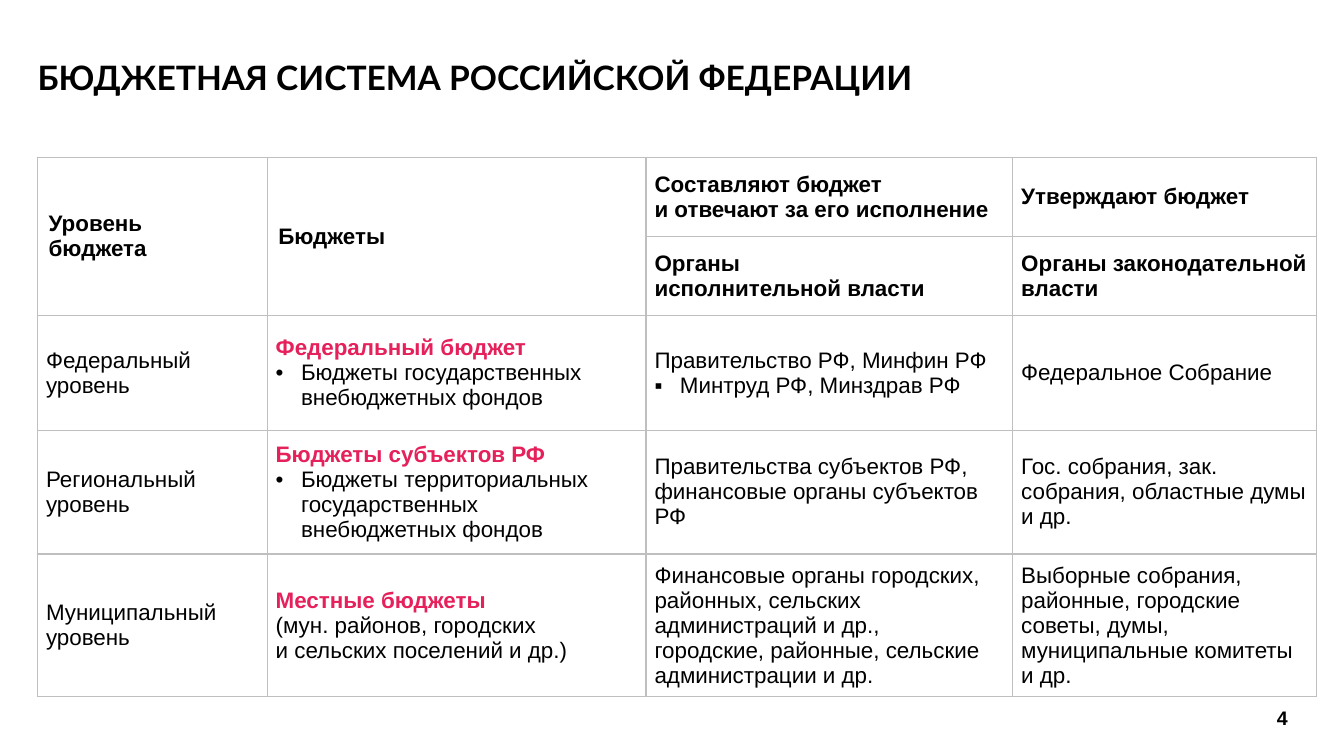
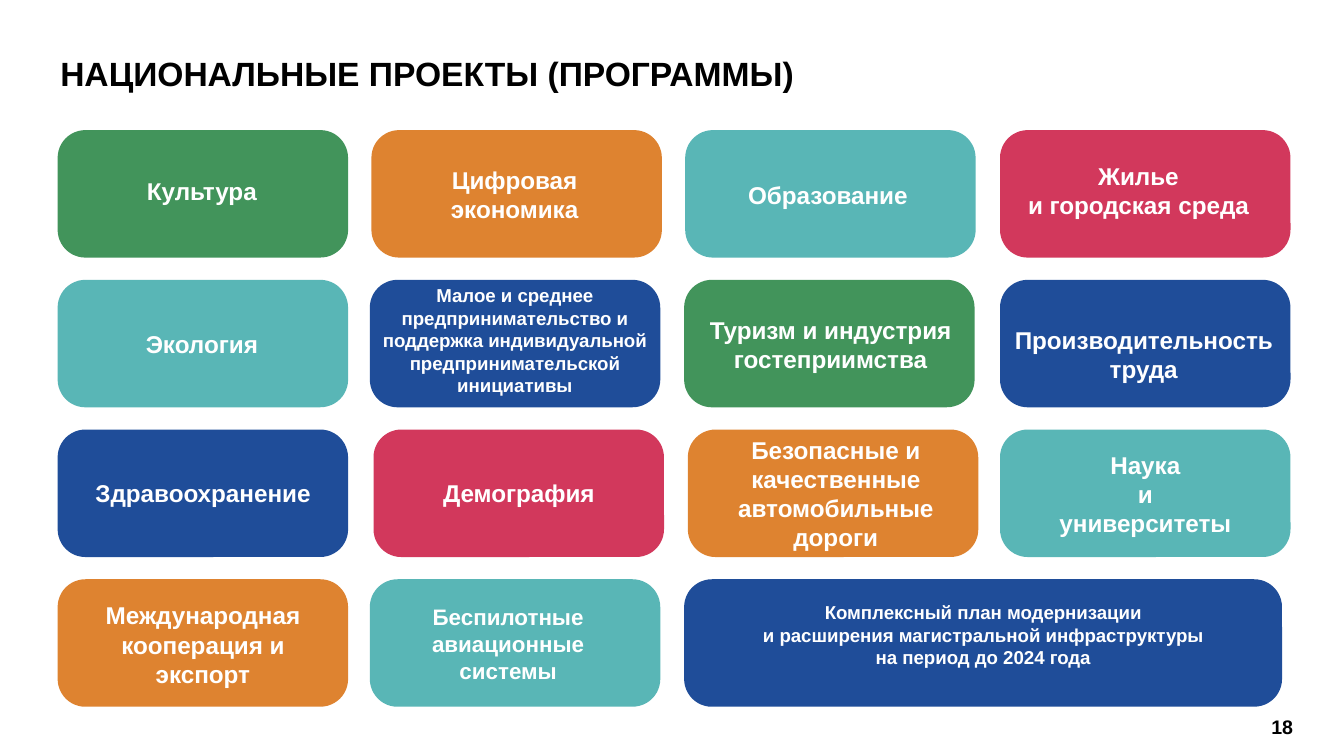
from dataclasses import dataclass

from lxml import etree
from pptx import Presentation
from pptx import util as u
from pptx.dml import color
from pptx.enum import shapes, text
from pptx.oxml import ns


@dataclass(frozen=True)
class Theme:
    black: str = "000000"
    white: str = "FFFFFF"
    rule: str = "BFBFBF"
    accent: str = "E5205A"
    red: str = "D2385C"
    teal: str = "59B6B6"
    blue: str = "1F4D99"
    orange: str = "DE8330"
    green: str = "42945B"
    body_font: str = "Arial"
    title_font: str = "Lato"
    title_size: float = 18
    card_size: float = 13
    card_medium: float = 12
    card_small: float = 10
    table_size: float = 12
    number_size: float = 10.5


THEME = Theme()


@dataclass(frozen=True)
class Area:
    left: float
    top: float
    width: float
    height: float

    def lengths(self) -> tuple:
        return tuple(u.Cm(v) for v in (self.left, self.top, self.width, self.height))


@dataclass(frozen=True)
class Style:
    size: float
    color: str = THEME.black
    bold: bool = True
    font: str = THEME.body_font


@dataclass(frozen=True)
class Line:
    text: str
    style: Style
    bullet: str = ""


@dataclass(frozen=True)
class Card:
    row: int
    left: float
    fill: str
    text: str
    label: Area
    size: float = THEME.card_size
    width: float = 5.49


HEAD = Style(THEME.table_size)
PLAIN = Style(THEME.table_size, bold=False)
ACCENT = Style(THEME.table_size, THEME.accent)

COLUMN_WIDTHS = (4.34, 7.16, 6.93, 5.74)
ROW_HEIGHTS = (1.5, 1.5, 2.16, 2.34, 2.59)
HEADER_ROWS = (
    ("Уровень\nбюджета", "Бюджеты",
     "Составляют бюджет\nи отвечают за его исполнение", "Утверждают бюджет"),
    ("", "", "Органы\nисполнительной власти", "Органы законодательной власти"),
)
BODY_ROWS = (
    ("Федеральный уровень",
     (Line("Федеральный бюджет", ACCENT),
      Line("Бюджеты государственных\nвнебюджетных фондов", PLAIN, "•")),
     (Line("Правительство РФ, Минфин РФ", PLAIN),
      Line("Минтруд РФ, Минздрав РФ", PLAIN, "▪")),
     "Федеральное Собрание"),
    ("Региональный уровень",
     (Line("Бюджеты субъектов РФ", ACCENT),
      Line("Бюджеты территориальных государственных внебюджетных фондов", PLAIN, "•")),
     "Правительства субъектов РФ, финансовые органы субъектов РФ",
     "Гос. собрания, зак. собрания, областные думы и др."),
    ("Муниципальный уровень",
     (Line("Местные бюджеты", ACCENT),
      Line("(мун. районов, городских\nи сельских поселений и др.)", PLAIN)),
     "Финансовые органы городских, районных, сельских администраций и др.,\n"
     "городские, районные, сельские администрации и др.",
     "Выборные собрания, районные, городские советы, думы, муниципальные комитеты и др."),
)

CARD_TOP, CARD_PITCH, CARD_HEIGHT, CARD_CORNER = 2.46, 2.83, 2.41, 0.218
CARDS = (
    Card(0, 1.09, THEME.green, "Культура", Area(1.91, 3.23, 3.81, 0.76)),
    Card(0, 7.02, THEME.orange, "Цифровая экономика", Area(7.82, 3, 3.81, 1.35)),
    Card(0, 12.95, THEME.teal, "Образование", Area(13.74, 3.3, 3.81, 0.76)),
    Card(0, 18.9, THEME.red, "Жилье\nи городская среда", Area(18.9, 2.92, 5.23, 1.35)),
    Card(1, 1.09, THEME.teal, "Экология", Area(1.91, 6.12, 3.81, 0.76)),
    Card(1, 6.99, THEME.blue,
         "Малое и среднее предпринимательство и поддержка индивидуальной "
         "предпринимательской инициативы",
         Area(6.91, 5.18, 5.64, 2.51), THEME.card_small),
    Card(1, 12.93, THEME.green, "Туризм и индустрия гостеприимства",
         Area(13.08, 5.31, 5.23, 2.41)),
    Card(1, 18.9, THEME.blue, "Производительность труда", Area(19, 5.44, 5.23, 2.51)),
    Card(2, 1.09, THEME.blue, "Здравоохранение", Area(1.37, 8.94, 4.93, 0.76)),
    Card(2, 7.06, THEME.red, "Демография", Area(7.9, 8.94, 3.81, 0.76)),
    Card(2, 13, THEME.orange, "Безопасные и качественные автомобильные дороги",
         Area(13.79, 8.36, 4.01, 1.93)),
    Card(2, 18.9, THEME.teal, "Наука\nи университеты", Area(19.74, 8.66, 3.81, 1.35)),
    Card(3, 1.09, THEME.orange, "Международная кооперация и экспорт",
         Area(1.37, 10.95, 4.93, 2.46)),
    Card(3, 6.99, THEME.teal, "Беспилотные авиационные системы",
         Area(7.14, 11.2, 4.93, 1.93), THEME.card_medium),
    Card(3, 12.93, THEME.blue,
         "Комплексный план модернизации\nи расширения магистральной инфраструктуры\n"
         "на период до 2024 года",
         Area(14.2, 10.77, 8.76, 2.46), THEME.card_small, 11.3),
)


def write_line(para, line: Line) -> None:
    """Fill one paragraph, turning newlines into line breaks."""
    para.text = line.text.replace("\n", "\v")
    if line.bullet:
        props = para._p.get_or_add_pPr()
        props.set("marL", str(u.Cm(0.48)))
        props.set("indent", str(-u.Cm(0.48)))
        etree.SubElement(props, ns.qn("a:buFont")).set("typeface", THEME.body_font)
        etree.SubElement(props, ns.qn("a:buChar")).set("char", line.bullet)
    for span in para.runs:
        span.font.name = line.style.font
        span.font.size = u.Pt(line.style.size)
        span.font.bold = line.style.bold
        span.font.color.rgb = color.RGBColor.from_string(line.style.color)


def add_label(page, area: Area, line: Line, inset: float,
              align=text.PP_ALIGN.CENTER, anchor=text.MSO_ANCHOR.MIDDLE) -> None:
    """Add a wrapped text box with equal insets."""
    frame = page.shapes.add_textbox(*area.lengths()).text_frame
    frame.word_wrap = True
    frame.vertical_anchor = anchor
    frame.margin_left = frame.margin_right = u.Cm(inset)
    frame.margin_top = frame.margin_bottom = u.Cm(inset)
    write_line(frame.paragraphs[0], line)
    frame.paragraphs[0].alignment = align


def add_page(deck, title: str, font: str, area: Area, inset: float,
             number: str, number_top: float):
    """Add a blank page with its title and page number."""
    page = deck.slides.add_slide(deck.slide_layouts[6])
    add_label(page, area, Line(title, Style(THEME.title_size, font=font)), inset,
              text.PP_ALIGN.LEFT, text.MSO_ANCHOR.TOP)
    add_label(page, Area(23.22, number_top, 2.03, 0.76),
              Line(number, Style(THEME.number_size)), 0.15)
    return page


def frame_cell(cell) -> None:
    """Give a cell thin grey borders and no fill."""
    props = cell._tc.get_or_add_tcPr()
    for side in ("lnL", "lnR", "lnT", "lnB"):
        border = etree.SubElement(props, ns.qn(f"a:{side}"), w=str(u.Pt(0.75)))
        fill = etree.SubElement(border, ns.qn("a:solidFill"))
        etree.SubElement(fill, ns.qn("a:srgbClr"), val=THEME.rule)
    cell.fill.background()


def fill_cell(cell, lines: tuple, wide_inset: bool) -> None:
    """Write lines into a cell, centred vertically."""
    cell.vertical_anchor = text.MSO_ANCHOR.MIDDLE
    cell.margin_left = cell.margin_right = u.Cm(0.21 if wide_inset else 0.16)
    cell.margin_top = cell.margin_bottom = u.Cm(0.1 if wide_inset else 0.08)
    for index, line in enumerate(lines):
        frame = cell.text_frame
        write_line(frame.add_paragraph() if index else frame.paragraphs[0], line)


def add_budget_table(page) -> None:
    """Add the table of budget levels."""
    area = Area(0.71, 2.97, sum(COLUMN_WIDTHS), sum(ROW_HEIGHTS))
    table = page.shapes.add_table(
        len(ROW_HEIGHTS), len(COLUMN_WIDTHS), *area.lengths()).table
    table.first_row = table.horz_banding = False
    for column, width in zip(table.columns, COLUMN_WIDTHS):
        column.width = u.Cm(width)
    for row, height in zip(table.rows, ROW_HEIGHTS):
        row.height = u.Cm(height)
    for index in (0, 1):
        table.cell(0, index).merge(table.cell(1, index))
    for row, entries in enumerate(HEADER_ROWS + BODY_ROWS):
        style = HEAD if row < len(HEADER_ROWS) else PLAIN
        for column, entry in enumerate(entries):
            cell = table.cell(row, column)
            frame_cell(cell)
            if entry:
                lines = (Line(entry, style),) if isinstance(entry, str) else entry
                fill_cell(cell, lines, cell.is_merge_origin)


def add_card(page, card: Card) -> None:
    """Add a rounded card and its label."""
    area = Area(card.left, CARD_TOP + card.row * CARD_PITCH, card.width, CARD_HEIGHT)
    shape = page.shapes.add_shape(
        shapes.MSO_SHAPE.ROUNDED_RECTANGLE, *area.lengths())
    shape.adjustments[0] = CARD_CORNER
    shape.shadow.inherit = False
    shape.fill.solid()
    shape.fill.fore_color.rgb = color.RGBColor.from_string(card.fill)
    shape.line.fill.background()
    add_label(page, card.label, Line(card.text, Style(card.size, THEME.white)), 0.1)


def main() -> None:
    """Build and save the deck."""
    deck = Presentation()
    deck.slide_width, deck.slide_height = u.Cm(25.4), u.Cm(14.29)
    budget = add_page(deck, "БЮДЖЕТНАЯ СИСТЕМА РОССИЙСКОЙ ФЕДЕРАЦИИ", THEME.title_font,
                      Area(0.71, 1.07, 19.13, 1.9), 0, "4", 13.18)
    add_budget_table(budget)
    projects = add_page(deck, "НАЦИОНАЛЬНЫЕ ПРОЕКТЫ (ПРОГРАММЫ)", THEME.body_font,
                        Area(1.04, 0.91, 19.08, 0.97), 0.1, "18", 13.36)
    for card in CARDS:
        add_card(projects, card)


    deck.save("out.pptx")


if __name__ == "__main__":
    main()
